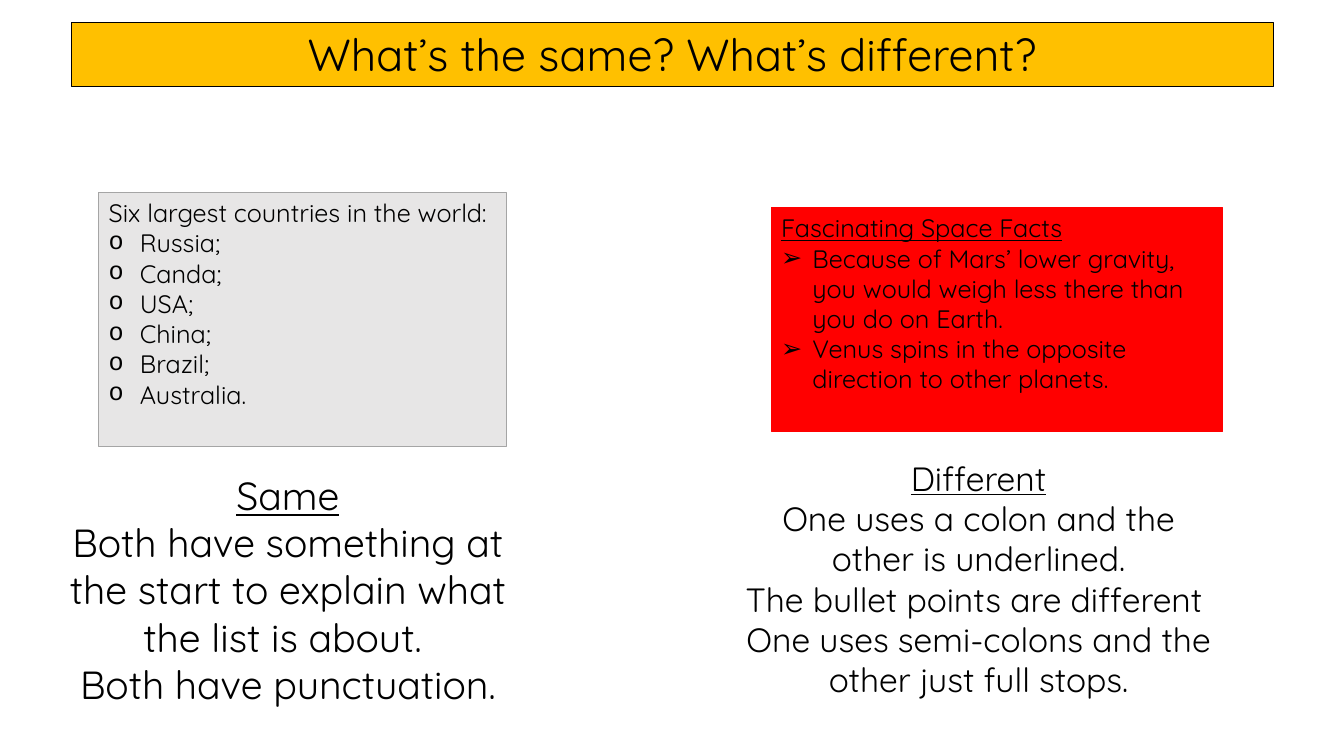
from pptx import Presentation, util as u
from pptx.dml.color import RGBColor
from pptx.enum import shapes, text
from pptx.oxml.ns import qn
from lxml import etree

WIDE, HIGH = 13.33, 7.5
FONT = "Quicksand"
INDENT = 0.31

# place (inches), fill, line, size, centred, underlined heading, bullet, bullet font, lines
BOXES = [
    dict(at=(0.71, 0.22, 11.92, 0.64), fill="FFC000", line="000000", size=32,
         mid=True, lines=["What’s the same? What’s different?"]),
    dict(at=(0.98, 1.91, 4.04, 2.52), fill="E7E6E6", line="A5A5A5", size=18,
         mark=("o", "Courier New"),
         lines=["Six largest countries in the world:", "Russia;", "Canda;",
                "USA;", "China;", "Brazil;", "Australia."]),
    dict(at=(7.65, 2.06, 4.48, 2.22), fill="FF0000", line="FF0000", size=18,
         under=True, mark=("➢", "Arial"),
         lines=["Fascinating Space Facts",
                "Because of Mars’ lower gravity, you would weigh less there "
                "than you do on Earth.",
                "Venus spins in the opposite direction to other planets."]),
    dict(at=(0.44, 4.63, 4.83, 2.46), size=28, mid=True, under=True,
         lines=["Same",
                "Both have something at the start to explain what the list "
                "is about. ",
                "Both have punctuation."]),
    dict(at=(7.29, 4.49, 4.83, 2.93), size=24, mid=True, under=True,
         lines=["Different",
                "One uses a colon and the other is underlined.",
                "The bullet points are different ",
                "One uses semi-colons and the other just full stops."]),
]


def color(code):
    return RGBColor.from_string(code)


def bullet(para, sign, font):
    """Give the paragraph a hanging indent and a bullet sign."""
    props = para._p.get_or_add_pPr()
    props.set("marL", str(u.Inches(INDENT)))
    props.set("indent", str(-u.Inches(INDENT)))
    etree.SubElement(props, qn("a:buFont")).set("typeface", font)
    etree.SubElement(props, qn("a:buChar")).set("char", sign)


def add_box(slide, at, size, lines, fill=None, line=None, mid=False,
            under=False, mark=None):
    """Draw a filled panel, or a plain text box when no fill is given."""
    place = [u.Inches(n) for n in at]
    if fill:
        box = slide.shapes.add_shape(shapes.MSO_SHAPE.RECTANGLE, *place)
        box.shadow.inherit = False
        box.fill.solid()
        box.fill.fore_color.rgb = color(fill)
        box.line.color.rgb = color(line)
        box.line.width = u.Pt(0.75)
    else:
        box = slide.shapes.add_textbox(*place)
    frame = box.text_frame
    frame.text = "\n".join(lines)
    frame.word_wrap = True
    frame.vertical_anchor = text.MSO_ANCHOR.TOP
    frame.auto_size = text.MSO_AUTO_SIZE.SHAPE_TO_FIT_TEXT
    side = text.PP_ALIGN.CENTER if mid else text.PP_ALIGN.LEFT
    for i, para in enumerate(frame.paragraphs):
        para.alignment = side
        if mark and i:
            bullet(para, *mark)
        for run in para.runs:
            run.font.name = FONT
            run.font.size = u.Pt(size)
            run.font.color.rgb = color("000000")
            run.font.underline = under and i == 0
    # Panels keep their spare room below the last line.
    if mark:
        frame.auto_size = text.MSO_AUTO_SIZE.NONE


def main():
    deck = Presentation()
    deck.slide_width, deck.slide_height = u.Inches(WIDE), u.Inches(HIGH)
    slide = deck.slides.add_slide(deck.slide_layouts[6])
    for box in BOXES:
        add_box(slide, **box)
    deck.save("out.pptx")


if __name__ == "__main__":
    main()
